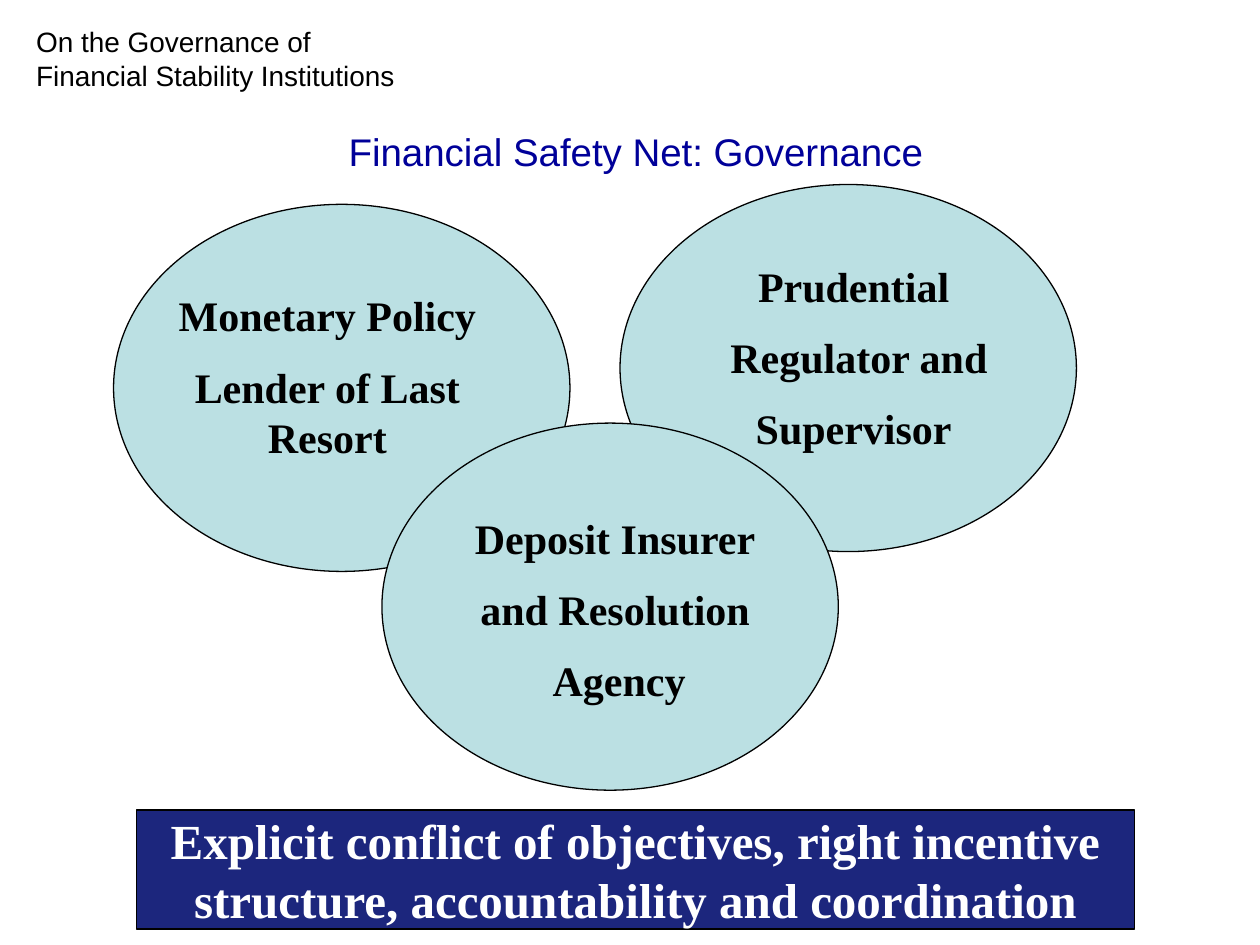
from dataclasses import dataclass

from pptx import Presentation
from pptx.dml.color import RGBColor
from pptx.enum.shapes import MSO_SHAPE
from pptx.enum.text import MSO_ANCHOR, MSO_AUTO_SIZE, PP_ALIGN
from pptx.shapes.autoshape import Shape
from pptx.slide import Slide
from pptx.text.text import TextFrame
from pptx.util import Cm, Pt

OVAL, RECTANGLE = MSO_SHAPE.OVAL, MSO_SHAPE.RECTANGLE
LEFT, CENTER = PP_ALIGN.LEFT, PP_ALIGN.CENTER
TOP, MIDDLE, BOTTOM = MSO_ANCHOR.TOP, MSO_ANCHOR.MIDDLE, MSO_ANCHOR.BOTTOM
NO_AUTOFIT = MSO_AUTO_SIZE.NONE

COLORS = {
    "oval": "BBE0E3",
    "banner": "1C267D",
    "title": "000099",
    "dark": "000000",
    "light": "FFFFFF",
}
FORMATS = {
    "header": {"name": "Arial", "size": Pt(16), "bold": False},
    "title": {"name": "Arial", "size": Pt(22), "bold": False},
    "caption": {"name": "Times New Roman", "size": Pt(24), "bold": True},
    "banner": {"name": "Times New Roman", "size": Pt(28), "bold": True},
}
OVAL_SIZE = (9.2, 7.4)


@dataclass(frozen=True)
class Box:
    left: float
    top: float
    width: float
    height: float

    def lengths(self) -> tuple[Cm, Cm, Cm, Cm]:
        return Cm(self.left), Cm(self.top), Cm(self.width), Cm(self.height)


@dataclass(frozen=True)
class Institution:
    oval_left: float
    oval_top: float
    caption_box: Box
    lines: tuple[str, ...]


INSTITUTIONS = (
    Institution(2.29, 4.12, Box(2.9, 5.72, 7.4, 3.81),
                ("Monetary Policy", "Lender of Last Resort")),
    Institution(12.5, 3.72, Box(13.51, 5.12, 7.4, 4.32),
                ("Prudential", " Regulator and", "Supervisor")),
    Institution(7.7, 8.53, Box(8.3, 10.2, 8.2, 4.32),
                ("Deposit Insurer", "and Resolution", " Agency")),
)


def write_text(frame: TextFrame, lines: tuple[str, ...], style: str, color: str,
               align: PP_ALIGN = CENTER, anchor: MSO_ANCHOR = TOP,
               gap: float = 0, wrap: bool = True) -> None:
    frame_format = {"word_wrap": wrap, "auto_size": NO_AUTOFIT, "vertical_anchor": anchor}
    for attribute, value in frame_format.items():
        setattr(frame, attribute, value)
    for index, line in enumerate(lines):
        paragraph = frame.add_paragraph() if index else frame.paragraphs[0]
        paragraph.alignment = align
        paragraph.space_before = Pt(gap if index else 0)
        run = paragraph.add_run()
        run.text = line
        for attribute, value in FORMATS[style].items():
            setattr(run.font, attribute, value)
        run.font.color.rgb = RGBColor.from_string(COLORS[color])


def add_panel(slide: Slide, preset: MSO_SHAPE, box: Box, fill: str) -> Shape:
    panel = slide.shapes.add_shape(preset, *box.lengths())
    panel.shadow.inherit = False
    panel.fill.solid()
    panel.fill.fore_color.rgb = RGBColor.from_string(COLORS[fill])
    panel.line.color.rgb = RGBColor.from_string(COLORS["dark"])
    panel.line.width = Pt(0.75)
    return panel


def add_caption(slide: Slide, institution: Institution) -> None:
    caption = slide.shapes.add_textbox(*institution.caption_box.lengths())
    write_text(caption.text_frame, institution.lines, "caption", "dark", gap=12)


def add_title(slide: Slide) -> None:
    title = slide.shapes.title
    title.left, title.top, title.width, title.height = Box(1.07, 2.31, 23.5, 1.45).lengths()
    title.text_frame.margin_bottom = Cm(0.25)
    write_text(title.text_frame, ("Financial Safety Net: Governance",),
               "title", "title", anchor=BOTTOM)


def main() -> None:
    deck = Presentation()
    deck.slide_width, deck.slide_height = Cm(25.4), Cm(19.05)
    slide = deck.slides.add_slide(deck.slide_layouts[5])

    add_title(slide)
    header = slide.shapes.add_textbox(*Box(0.48, 0.38, 8.3, 1.63).lengths())
    write_text(header.text_frame, ("On the Governance of Financial Stability Institutions",),
               "header", "dark", align=LEFT)

    for institution in INSTITUTIONS:
        add_panel(slide, OVAL, Box(institution.oval_left, institution.oval_top, *OVAL_SIZE), "oval")
    for institution in INSTITUTIONS:
        add_caption(slide, institution)

    banner = add_panel(slide, RECTANGLE, Box(2.75, 16.33, 20.12, 2.4), "banner")
    write_text(banner.text_frame,
               ("Explicit conflict of objectives, right incentive",
                "structure, accountability and coordination"),
               "banner", "light", anchor=MIDDLE, wrap=False)

    deck.save("out.pptx")


if __name__ == "__main__":
    main()
